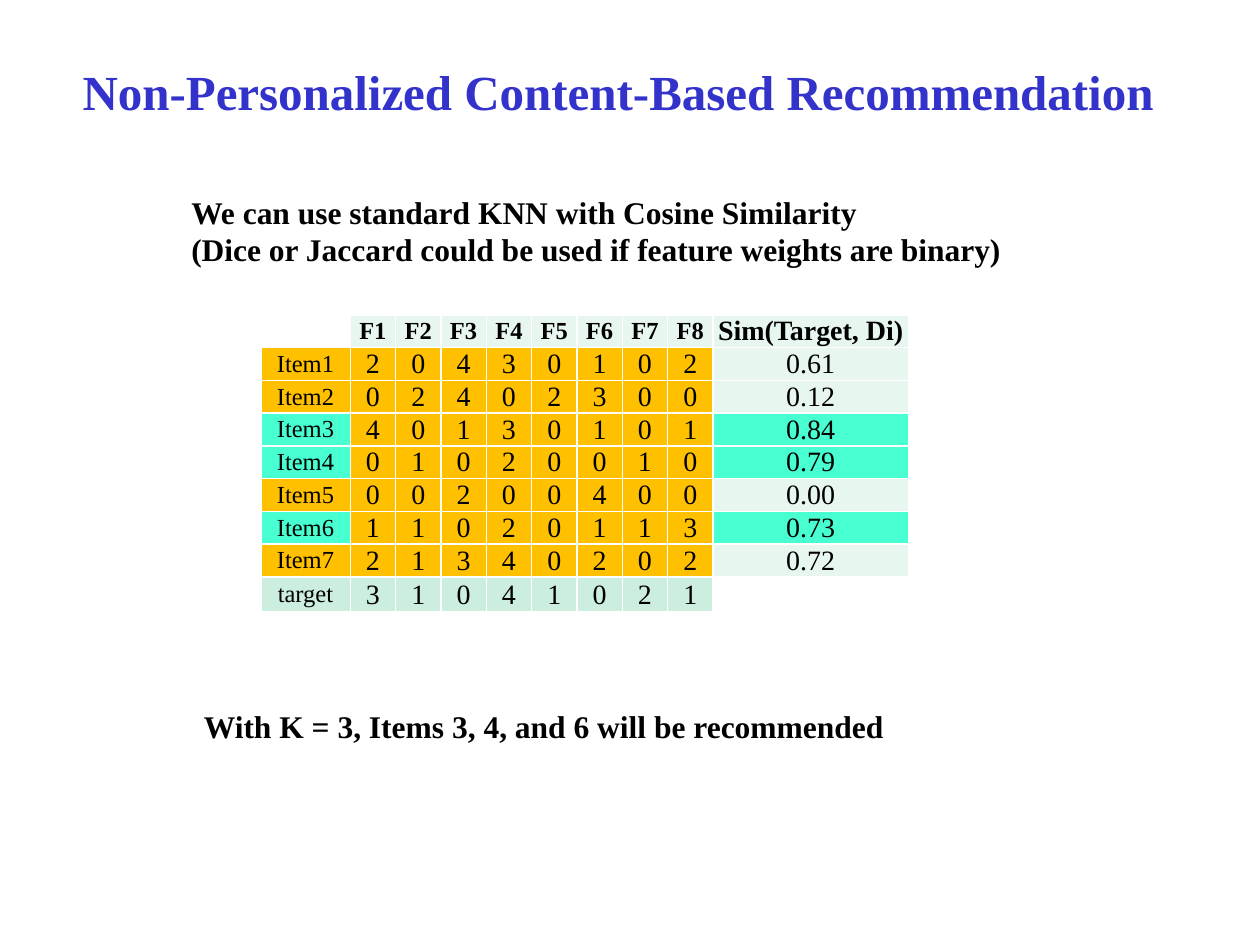
from dataclasses import dataclass

from pptx import Presentation
from pptx import oxml
from pptx import util as u
from pptx.dml import color
from pptx.enum import text
from pptx.oxml import ns


@dataclass(frozen=True)
class Theme:
    font: str = "Times New Roman"
    title: str = "3333CC"
    ink: str = "000000"
    paper: str = "FFFFFF"
    pale: str = "E7F6EF"
    target: str = "CCEEDF"
    item: str = "FFC000"
    chosen: str = "47FFD1"
    title_size: int = 28
    statement_size: int = 18
    value_size: int = 16
    label_size: int = 14


THEME = Theme()
FEATURES = [f"F{number}" for number in range(1, 9)]
RATINGS = [
    ("20430102", "0.61"),
    ("02402300", "0.12"),
    ("40130101", "0.84"),
    ("01020010", "0.79"),
    ("00200400", "0.00"),
    ("11020113", "0.73"),
    ("21340202", "0.72"),
]
TARGET = "31041021"
CHOSEN_ITEMS = {3, 4, 6}


def set_values(target, values):
    for name, value in values.items():
        setattr(target, name, value)


def write(frame, content, size, ink=THEME.ink, bold=True, align=None):
    para = frame.paragraphs[0]
    para.text = content
    para.alignment = align
    for span in para.runs:
        set_values(span.font, {"name": THEME.font, "size": u.Pt(size), "bold": bold})
        span.font.color.rgb = color.RGBColor.from_string(ink)


def place(box, left, top, width, height):
    set_values(box, {
        "left": u.Inches(left), "top": u.Inches(top),
        "width": u.Inches(width), "height": u.Inches(height),
    })


def add_title(page, content):
    title = page.shapes.title
    place(title, 0.42, 0.22, 8.97, 1)
    set_values(title.text_frame, {
        "word_wrap": True,
        "auto_size": text.MSO_AUTO_SIZE.NONE,
        "vertical_anchor": text.MSO_ANCHOR.MIDDLE,
    })
    write(title.text_frame, content, THEME.title_size, THEME.title,
          align=text.PP_ALIGN.CENTER)


def add_statement(page, content, left, top, height):
    box = page.shapes.add_textbox(*map(u.Inches, (left, top, 7.16, height)))
    set_values(box.text_frame, {
        "word_wrap": True, "auto_size": text.MSO_AUTO_SIZE.SHAPE_TO_FIT_TEXT,
    })
    write(box.text_frame, content, THEME.statement_size)


def add_borders(cell):
    properties = cell._tc.get_or_add_tcPr()
    for position, side in enumerate(("lnL", "lnR", "lnT", "lnB")):
        border = oxml.parse_xml(
            f'<a:{side} {ns.nsdecls("a")} w="{u.Pt(1)}"><a:solidFill>'
            f'<a:srgbClr val="{THEME.paper}"/></a:solidFill></a:{side}>')
        properties.insert(position, border)


def fill_cell(cell, content, fill, size, bold):
    set_values(cell, {
        "margin_left": u.Inches(0.01), "margin_right": u.Inches(0.01),
        "margin_top": 0, "margin_bottom": 0,
        "vertical_anchor": text.MSO_ANCHOR.MIDDLE,
    })
    cell.fill.solid()
    cell.fill.fore_color.rgb = color.RGBColor.from_string(fill)
    add_borders(cell)
    if content:
        write(cell.text_frame, content, size, bold=bold, align=text.PP_ALIGN.CENTER)
    else:
        ending = cell.text_frame.paragraphs[0]._p.get_or_add_endParaRPr()
        ending.set("sz", str(size * 100))


def similarity_rows():
    count = len(FEATURES)
    yield ["", *FEATURES, "Sim(Target, Di)"], [THEME.paper] + [THEME.pale] * (count + 1)
    for number, (ratings, score) in enumerate(RATINGS, 1):
        chosen = number in CHOSEN_ITEMS
        label_fill = THEME.chosen if chosen else THEME.item
        score_fill = THEME.chosen if chosen else THEME.pale
        yield ([f"Item{number}", *ratings, score],
               [label_fill] + [THEME.item] * count + [score_fill])
    yield ["target", *TARGET, ""], [THEME.target] * (count + 1) + [THEME.paper]


def add_similarity_table(page):
    rows = list(similarity_rows())
    widths = [0.71] + [0.36] * len(FEATURES) + [1.55]
    heights = [0.26] * (len(rows) - 1) + [0.28]
    table = page.shapes.add_table(
        len(rows), len(widths),
        *map(u.Inches, (2.07, 2.5, sum(widths), sum(heights)))).table
    set_values(table, {"first_row": False, "horz_banding": False})
    for column, width in zip(table.columns, widths):
        column.width = u.Inches(width)
    for row, height in zip(table.rows, heights):
        row.height = u.Inches(height)
    for row, (contents, fills) in enumerate(rows):
        for column, (content, fill) in enumerate(zip(contents, fills)):
            is_label = column == 0 or (row == 0 and content in FEATURES)
            size = THEME.label_size if is_label else THEME.value_size
            fill_cell(table.cell(row, column), content, fill, size, bold=row == 0)


def main():
    deck = Presentation()
    set_values(deck, {"slide_width": u.Inches(10), "slide_height": u.Inches(7.5)})
    page = deck.slides.add_slide(deck.slide_layouts.get_by_name("Title Only"))
    add_similarity_table(page)
    add_title(page, "Non-Personalized Content-Based Recommendation")
    add_statement(
        page,
        "We can use standard KNN with Cosine Similarity \v"
        "(Dice or Jaccard could be used if feature weights are binary)",
        1.42, 1.48, 0.71)
    add_statement(page, "With K = 3, Items 3, 4, and 6 will be recommended",
                  1.52, 5.56, 0.4)
    deck.save("out.pptx")


if __name__ == "__main__":
    main()
